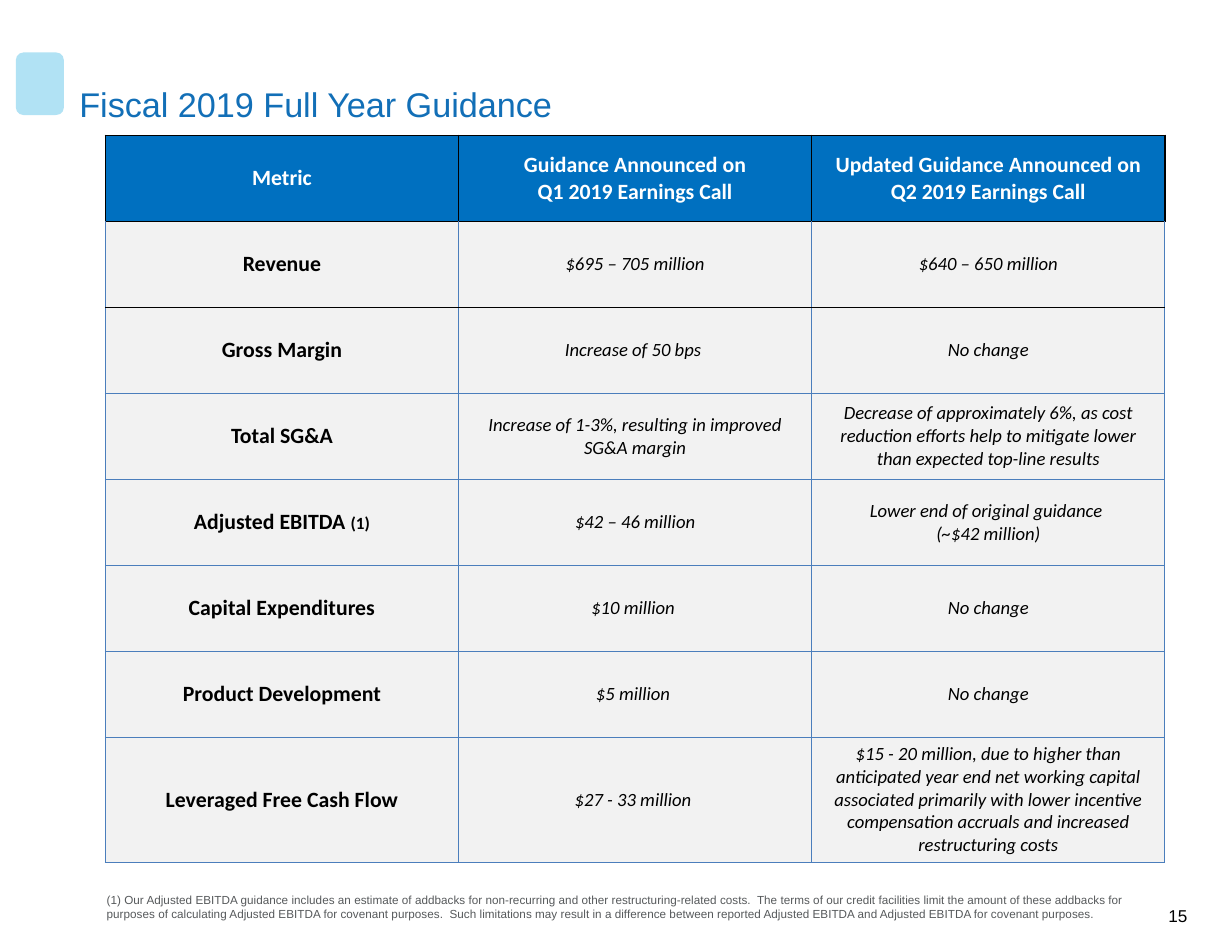
from lxml.etree import SubElement
from pptx import Presentation
from pptx.dml.color import RGBColor
from pptx.enum.shapes import MSO_SHAPE as Preset
from pptx.enum.text import MSO_ANCHOR as Anchor, PP_ALIGN as Align
from pptx.oxml.ns import qn
from pptx.util import Cm, Pt

COLORS = {
    "accent": "B1E2F4", "title": "126FB7", "header": "0070C0", "body": "F2F2F2",
    "rule": "4B7EBC", "black": "000000", "white": "FFFFFF", "note": "56595B",
}


def add_span(para, text, size, color, font="Arial", bold=False, italic=False):
    span = para.add_run()
    span.text = text
    span.font.name = font
    span.font.size = Pt(size)
    span.font.bold = bold
    span.font.italic = italic
    span.font.color.rgb = RGBColor.from_string(COLORS[color])


def set_borders(cell, top, bottom, sides):
    """Rule the four edges; black edges are 1 pt, the others 0.75 pt."""
    properties = cell._tc.get_or_add_tcPr()
    edges = [("a:lnL", sides), ("a:lnR", sides), ("a:lnT", top), ("a:lnB", bottom)]
    for index, (tag, color) in enumerate(edges):
        width = Pt(1 if color == "black" else 0.75)
        line = SubElement(properties, qn(tag), w=str(width))
        fill = SubElement(line, qn("a:solidFill"))
        SubElement(fill, qn("a:srgbClr"), val=COLORS[color])
        properties.insert(index, line)


deck = Presentation()
deck.slide_width, deck.slide_height = Cm(27.94), Cm(21.59)
page = deck.slides.add_slide(deck.slide_layouts[6])

# Accent tile
tile = page.shapes.add_shape(Preset.ROUNDED_RECTANGLE, Cm(0.36), Cm(1.19), Cm(1.09), Cm(1.42))
tile.adjustments[0] = 0.16
tile.shadow.inherit = False
tile.fill.solid()
tile.fill.fore_color.rgb = RGBColor.from_string(COLORS["accent"])
tile.line.fill.background()

# Guidance table: each cell is a list of paragraphs
rows = [
    [["Metric"], [" Guidance Announced on ", "Q1 2019 Earnings Call"],
     ["Updated Guidance Announced on Q2 2019 Earnings Call"]],
    [["Revenue"], ["$695 – 705 million"], ["$640 – 650 million"]],
    [["Gross Margin"], ["Increase of 50 bps "], ["No change"]],
    [["Total SG&A"], ["Increase of 1-3%, resulting in improved SG&A margin"],
     ["Decrease of approximately 6%, as cost reduction efforts help to mitigate "
      "lower than expected top-line results"]],
    [["Adjusted EBITDA "], ["$42 – 46 million"],
     ["Lower end of original guidance ", "(~$42 million)"]],
    [["Capital Expenditures"], ["$10 million "], ["No change"]],
    [["Product Development"], ["$5 million "], ["No change"]],
    [["Leveraged Free Cash Flow"], ["$27 - 33 million "],
     ["$15 - 20 million, due to higher than anticipated year end net working capital "
      "associated primarily with lower incentive compensation accruals and increased "
      "restructuring costs"]],
]
frame = page.shapes.add_table(len(rows), 3, Cm(2.39), Cm(3.07), Cm(24.03), Cm(16.44))
table = frame.table
for column in table.columns:
    column.width = Cm(8.01)
for row in table.rows:
    row.height = Cm(1.95)
table.rows[len(rows) - 1].height = Cm(2.79)

for row_index, row in enumerate(rows):
    is_header = row_index == 0
    for column_index, lines in enumerate(row):
        cell = table.cell(row_index, column_index)
        cell.vertical_anchor = Anchor.MIDDLE
        cell.fill.solid()
        cell.fill.fore_color.rgb = RGBColor.from_string(COLORS["header" if is_header else "body"])
        set_borders(cell,
                    top="black" if row_index <= 2 else "rule",
                    bottom="black" if row_index <= 1 else "rule",
                    sides="black" if is_header else "rule")
        strong = is_header or column_index == 0
        for line_index, text in enumerate(lines):
            text_frame = cell.text_frame
            para = text_frame.add_paragraph() if line_index else text_frame.paragraphs[0]
            para.alignment = Align.CENTER
            add_span(para, text, 14 if strong else 12, "white" if is_header else "black",
                     "Calibri", bold=strong, italic=not strong)
            if text == "Adjusted EBITDA ":
                add_span(para, "(1)", 11, "black", "Calibri", bold=True)

# Title, page number and footnote: place, insets (left, top), text, size, colour
footnote = (
    "(1) Our Adjusted EBITDA guidance includes an estimate of addbacks for non-recurring "
    "and other restructuring-related costs.  The terms of our credit facilities limit the "
    "amount of these addbacks for purposes of calculating Adjusted EBITDA for covenant "
    "purposes.  Such limitations may result in a difference between reported Adjusted "
    "EBITDA and Adjusted EBITDA for covenant purposes."
)
texts = [
    ((1.55, 1.57, 24.82, 1.02), (0.25, 0.33), "Fiscal 2019 Full Year Guidance", 22, "title", 1),
    ((26.42, 20.45, 0.58, 0.51), (0.08, 0), "15", 11, "black", 1.2),
    ((2.39, 20.17, 24, 0.69), (0.03, 0.08), footnote, 7.5, "note", 1),
]
for place, (inset_left, inset_top), text, size, color, spacing in texts:
    box = page.shapes.add_textbox(*[Cm(length) for length in place])
    text_frame = box.text_frame
    text_frame.word_wrap = True
    text_frame.vertical_anchor = Anchor.TOP
    text_frame.margin_left, text_frame.margin_top = Cm(inset_left), Cm(inset_top)
    text_frame.margin_right = text_frame.margin_bottom = 0
    para = text_frame.paragraphs[0]
    para.line_spacing = spacing
    add_span(para, text, size, color)

deck.save("out.pptx")
